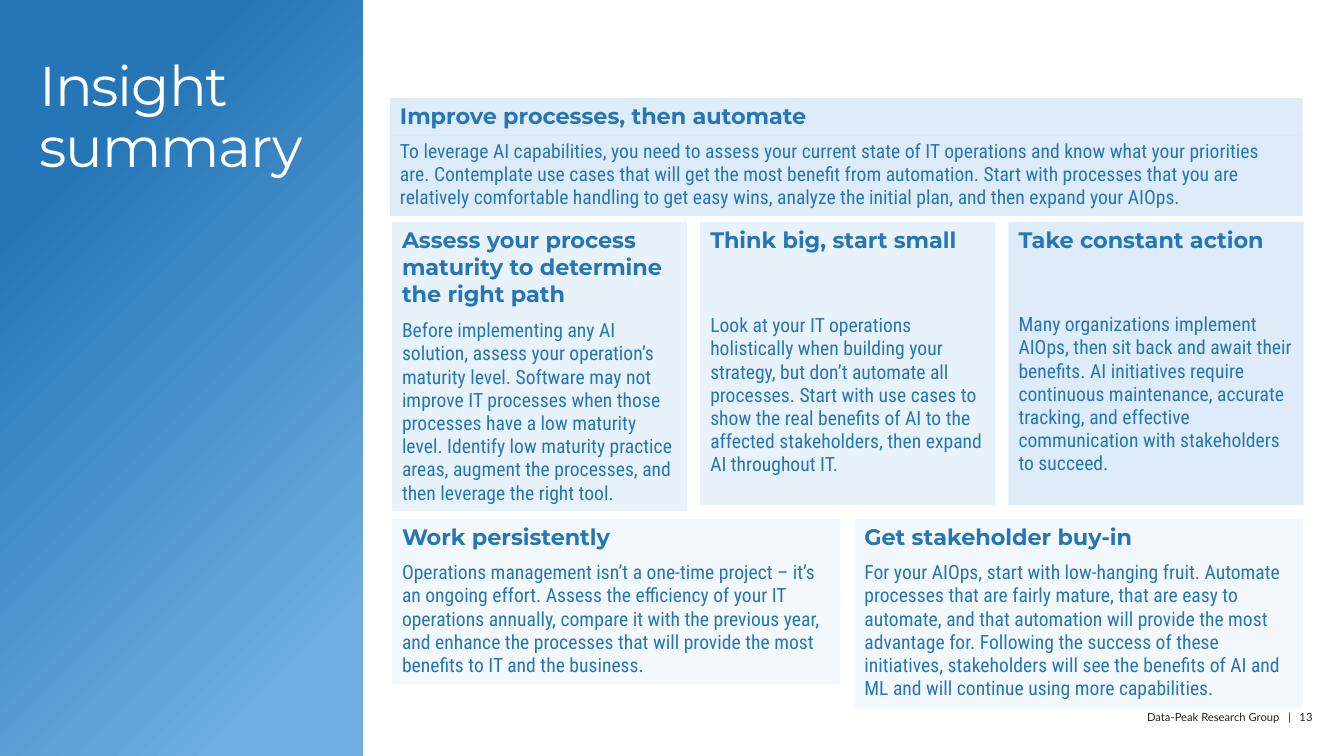
from pptx import Presentation
from pptx.dml.color import RGBColor
from pptx.enum.shapes import MSO_SHAPE
from pptx.enum.text import MSO_ANCHOR, MSO_AUTO_SIZE, PP_ALIGN
from pptx.oxml.ns import qn
from pptx.util import Inches, Pt
from lxml import etree

RECTANGLE = MSO_SHAPE.RECTANGLE
TOP, NO_FIT = MSO_ANCHOR.TOP, MSO_AUTO_SIZE.NONE
LEFT, RIGHT = PP_ALIGN.LEFT, PP_ALIGN.RIGHT

SLIDE_W, SLIDE_H = 13.34, 7.5
BLUE, SKY, PALE, FAINT = "2576B7", "6EAEE2", "9FC9EB", "CFE4F5"
WHITE, INK = "FFFFFF", "242424"
TINT_ALPHA = "23000"
NO_TABLE_STYLE = "{2D5ABB26-0587-4C30-8999-92F81FD0307C}"

COLUMN_W, HALF_W = 2.93, 4.45
COLUMN_X = [3.89 + i * 3.06 for i in range(3)]
HALF_X = [3.89, 8.48]
MIDDLE_Y, BOTTOM_Y = 2.2, 5.15

# left, top, width, heading height, body height, tint, heading, body
INSIGHTS = [
    (3.87, 0.97, 9.06, 0.36, 0.8, SKY, "Improve processes, then automate",
     "To leverage AI capabilities, you need to assess your current state of IT operations "
     "and know what your priorities are. Contemplate use cases that will get the most "
     "benefit from automation. Start with processes that you are relatively comfortable "
     "handling to get easy wins, analyze the initial plan, and then expand your AIOps."),
    (COLUMN_X[0], MIDDLE_Y, COLUMN_W, 0.92, 1.95, PALE,
     "Assess your process maturity to determine the right path",
     "Before implementing any AI solution, assess your operation’s maturity level. Software "
     "may not improve IT processes when those processes have a low maturity level. Identify "
     "low maturity practice areas, augment the processes, and then leverage the right tool."),
    (COLUMN_X[1], MIDDLE_Y, COLUMN_W, 0.87, 1.94, PALE, "Think big, start small",
     "Look at your IT operations holistically when building your strategy, but don’t automate "
     "all processes. Start with use cases to show the real benefits of AI to the affected "
     "stakeholders, then expand AI throughout IT."),
    (COLUMN_X[2], MIDDLE_Y, COLUMN_W, 0.86, 1.95, SKY, "Take constant action",
     "Many organizations implement AIOps, then sit back and await their benefits. AI "
     "initiatives require continuous maintenance, accurate tracking, and effective "
     "communication with stakeholders to succeed."),
    (HALF_X[0], BOTTOM_Y, HALF_W, 0.36, 1.27, FAINT, "Work persistently",
     "Operations management isn’t a one-time project – it’s an ongoing effort. Assess the "
     "efficiency of your IT operations annually, compare it with the previous year, and "
     "enhance the processes that will provide the most benefits to IT and the business."),
    (HALF_X[1], BOTTOM_Y, HALF_W, 0.36, 1.5, FAINT, "Get stakeholder buy-in",
     "For your AIOps, start with low-hanging fruit. Automate processes that are fairly "
     "mature, that are easy to automate, and that automation will provide the most advantage "
     "for. Following the success of these initiatives, stakeholders will see the benefits of "
     "AI and ML and will continue using more capabilities."),
]


def rgb(hex_color):
    return RGBColor.from_string(hex_color)


def write(frame, text, font, size, color, bold=False, align=LEFT):
    frame.text = text
    paragraph = frame.paragraphs[0]
    paragraph.alignment = align
    paragraph.font.name = font
    paragraph.font.size = Pt(size)
    paragraph.font.bold = bold
    paragraph.font.color.rgb = rgb(color)
    return paragraph


def set_insets(frame, right=0):
    frame.margin_left = frame.margin_top = frame.margin_bottom = 0
    frame.margin_right = Inches(right)


def add_side_panel(slide, left, top, width, height):
    panel = slide.shapes.add_shape(RECTANGLE, Inches(left), Inches(top),
                                   Inches(width), Inches(height))
    panel.shadow.inherit = False
    panel.line.fill.background()
    panel.fill.gradient()
    panel.fill.gradient_angle = 315
    for stop, (position, color) in zip(panel.fill.gradient_stops, [(0.21, BLUE), (0.87, SKY)]):
        stop.position = position
        stop.color.rgb = rgb(color)

    title = slide.shapes.title
    title.left, title.top = Inches(left + 0.39), Inches(top + 0.58)
    title.width, title.height = Inches(width - 0.71), Inches(1.27)
    frame = title.text_frame
    set_insets(frame)
    frame.word_wrap, frame.auto_size, frame.vertical_anchor = True, NO_FIT, TOP
    heading = write(frame, "Insight summary", "Montserrat", 40, WHITE)
    heading.line_spacing = 0.9
    heading.runs[0].font._element.set("spc", "-80")
    # The title must lie in front of the panel
    panel._element.addnext(title._element)


def tint_cell(cell, color):
    cell.fill.solid()
    cell.fill.fore_color.rgb = rgb(color)
    tint = cell._tc.tcPr.find(".//" + qn("a:srgbClr"))
    etree.SubElement(tint, qn("a:alpha")).set("val", TINT_ALPHA)


def add_insight(slide, left, top, width, heading_h, body_h, tint, heading, body):
    table = slide.shapes.add_table(2, 1, Inches(left), Inches(top), Inches(width),
                                   Inches(heading_h + body_h)).table
    table.first_row = table.horz_banding = False
    table._tbl.tblPr.find(qn("a:tableStyleId")).text = NO_TABLE_STYLE
    table.rows[0].height, table.rows[1].height = Inches(heading_h), Inches(body_h)
    heading_cell, body_cell = table.cell(0, 0), table.cell(1, 0)
    write(heading_cell.text_frame, heading, "Montserrat", 16, BLUE, bold=True)
    write(body_cell.text_frame, body, "Roboto Condensed", 14, BLUE)
    for cell in (heading_cell, body_cell):
        tint_cell(cell, tint)


def add_footer(slide, left, top, width, height):
    footer = slide.shapes.add_textbox(Inches(left), Inches(top), Inches(width), Inches(height))
    frame = footer.text_frame
    frame.word_wrap = True
    set_insets(frame, right=0.1)
    write(frame, "Data-Peak Research Group   |   13", "Lato", 8, INK, align=RIGHT)


def main():
    deck = Presentation()
    deck.slide_width, deck.slide_height = Inches(SLIDE_W), Inches(SLIDE_H)
    slide = deck.slides.add_slide(deck.slide_layouts[5])
    add_footer(slide, 9.37, 7.05, 3.76, 0.13)
    add_side_panel(slide, 0, 0, 3.6, SLIDE_H)
    for insight in INSIGHTS:
        add_insight(slide, *insight)
    deck.save("out.pptx")


if __name__ == "__main__":
    main()
